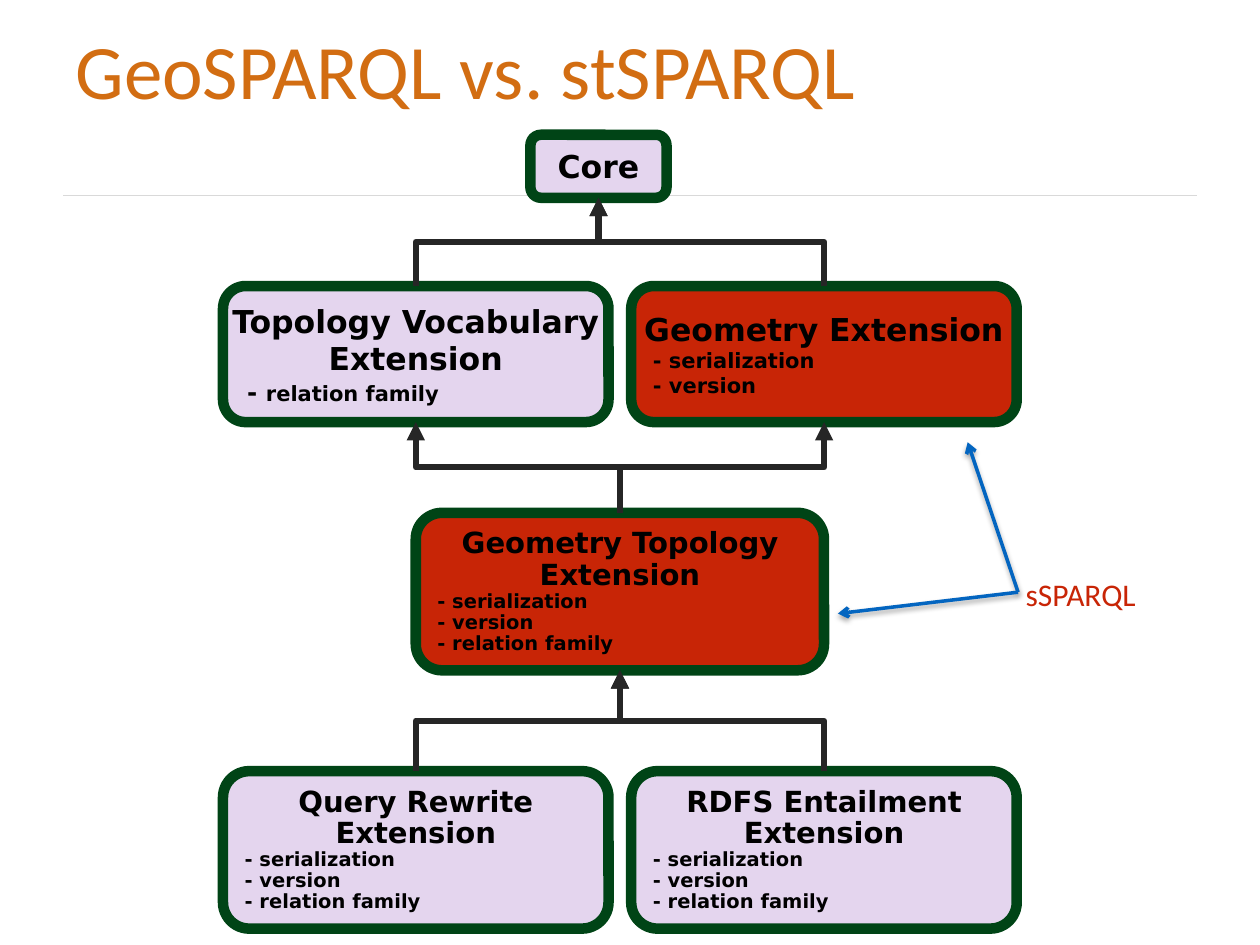
"""Builds the GeoSPARQL vs. stSPARQL slide, a hierarchy of extension boxes."""
from dataclasses import dataclass

from lxml import etree
from pptx import Presentation
from pptx.dml.color import RGBColor
from pptx.enum.shapes import MSO_CONNECTOR, MSO_SHAPE
from pptx.enum.text import MSO_ANCHOR, PP_ALIGN
from pptx.oxml.ns import qn
from pptx.util import Pt

PX = 9144
ROUNDED = MSO_SHAPE.ROUNDED_RECTANGLE
STRAIGHT, ELBOW = MSO_CONNECTOR.STRAIGHT, MSO_CONNECTOR.ELBOW
TOP, MIDDLE = MSO_ANCHOR.TOP, MSO_ANCHOR.MIDDLE
LEFT, CENTER = PP_ALIGN.LEFT, PP_ALIGN.CENTER


@dataclass(frozen=True)
class Theme:
    """Colours, fonts and type sizes of the slide."""
    title: str = "D26D12"
    rule: str = "D9D9D9"
    shared: str = "E4D5EE"
    covered: str = "C82506"
    border: str = "004416"
    tree: str = "262626"
    pointer: str = "0365C0"
    ink: str = "000000"
    text_font: str = "Calibri"
    box_font: str = "DejaVu Sans"
    title_size: float = 44
    label_size: float = 18
    heading_size: float = 18
    item_size: float = 12
    dash_size: float = 14
    small_heading_size: float = 16.6
    small_item_size: float = 11.1


def assign(target, values):
    """Set every attribute named in the dict of values."""
    for name, value in values.items():
        setattr(target, name, value)


class Diagram:
    """Draws the elements of one slide in one style."""

    def __init__(self, slide, theme):
        self.shapes = slide.shapes
        self.theme = theme

    def frame(self, shape, anchor, wrap, insets):
        left, top, right, bottom = (inset * PX for inset in insets)
        assign(shape.text_frame, {
            "vertical_anchor": anchor, "word_wrap": wrap,
            "margin_left": left, "margin_top": top,
            "margin_right": right, "margin_bottom": bottom})
        return shape.text_frame

    def run(self, paragraph, text, size, color, font, bold=False):
        run = paragraph.add_run()
        run.text = text
        assign(run.font, {"size": Pt(size), "name": font, "bold": bold})
        run.font.color.rgb = RGBColor.from_string(color)

    def text(self, bounds, words, size, color, anchor, insets):
        textbox = self.shapes.add_textbox(*(length * PX for length in bounds))
        frame = self.frame(textbox, anchor, True, insets)
        self.run(frame.paragraphs[0], words, size, color, self.theme.text_font)

    def box(self, bounds, fill, heading, items=(), small=False, dash_size=None):
        theme = self.theme
        heading_size = theme.small_heading_size if small else theme.heading_size
        item_size = theme.small_item_size if small else theme.item_size
        dash_size = dash_size or item_size
        spacing = 0.9 if small else 1.0

        box = self.shapes.add_shape(ROUNDED, *(length * PX for length in bounds))
        box.shadow.inherit = False
        box.fill.solid()
        box.fill.fore_color.rgb = RGBColor.from_string(fill)
        box.line.color.rgb = RGBColor.from_string(theme.border)
        box.line.width = Pt(6)
        frame = self.frame(box, MIDDLE, False, (0, 5, 0, 5))

        title = frame.paragraphs[0]
        assign(title, {"alignment": CENTER, "line_spacing": spacing})
        for index, line in enumerate(heading):
            if index:
                title.add_line_break()
            self.run(title, line, heading_size, theme.ink, theme.box_font, True)
        for item in items:
            paragraph = frame.add_paragraph()
            assign(paragraph, {"alignment": LEFT, "line_spacing": spacing})
            paragraph._p.get_or_add_pPr().set("marL", str(round(dash_size * PX)))
            self.run(paragraph, "- ", dash_size, theme.ink, theme.box_font, True)
            self.run(paragraph, item, item_size, theme.ink, theme.box_font, True)

    def line(self, start, end, color, width, kind=STRAIGHT, head=None, shadow=False):
        connector = self.shapes.add_connector(
            kind, *(round(length * PX) for length in (*start, *end)))
        connector.line.color.rgb = RGBColor.from_string(color)
        connector.line.width = Pt(width)
        if head:
            stroke = connector.line._get_or_add_ln()
            etree.SubElement(stroke, qn("a:tailEnd"), type=head)
        effects = etree.SubElement(connector._element.spPr, qn("a:effectLst"))
        if shadow:
            outer = etree.SubElement(
                effects, qn("a:outerShdw"), blurRad=str(Pt(3)), dist=str(Pt(1.8)),
                dir="5400000", rotWithShape="0")
            shade = etree.SubElement(outer, qn("a:srgbClr"), val=self.theme.ink)
            etree.SubElement(shade, qn("a:alpha"), val="35000")
        return connector

    def branch(self, child, parent):
        """Rise from child to parent by a quarter-turned elbow."""
        shift, rise = parent[0] - child[0], child[1] - parent[1]
        middle_x, middle_y = child[0] + shift / 2, child[1] - rise / 2
        turn, side = (90, -1) if shift > 0 else (270, 1)
        across, down = side * rise / 2, side * shift / 2
        elbow = self.line((middle_x - across, middle_y - down),
                          (middle_x + across, middle_y + down),
                          self.theme.tree, 3.5, ELBOW, "triangle")
        elbow._element.spPr.find(qn("a:xfrm")).set("rot", str(turn * 60000))

    def pointer(self, start, end):
        self.line(start, end, self.theme.pointer, 2, head="arrow", shadow=True)


def main():
    theme = Theme()
    deck = Presentation()
    assign(deck, {"slide_width": 1000 * PX, "slide_height": 750 * PX})
    diagram = Diagram(deck.slides.add_slide(deck.slide_layouts[6]), theme)

    diagram.line((50, 155), (950, 155), theme.rule, 0.75)
    diagram.text((55, 10, 895, 165), "GeoSPARQL vs. stSPARQL",
                 theme.title_size, theme.title, TOP, (5, 8, 5, 5))

    left, right, width = 177, 501, 306
    parameters = ("serialization", "version", "relation family")
    diagram.box((421, 107, 108, 50), theme.shared, ["Core"])
    diagram.box((left, 227, width, 108), theme.shared,
                ["Topology Vocabulary", "Extension"], parameters[2:],
                dash_size=theme.dash_size)
    diagram.box((right, 227, width, 108), theme.covered,
                ["Geometry Extension"], parameters[:2])
    for bounds, fill, heading in (
            ((330, 407, 324, 125), theme.covered, "Geometry Topology"),
            ((left, 612, width, 125), theme.shared, "Query Rewrite"),
            ((right, 612, width, 125), theme.shared, "RDFS Entailment")):
        diagram.box(bounds, fill, [heading, "Extension"], parameters, small=True)

    core_x, topology_x = 475, 492
    for column_x in (left + width // 2, right + width // 2):
        diagram.branch((column_x, 227), (core_x, 157))
        diagram.branch((topology_x, 407), (column_x, 335))
        diagram.branch((column_x, 612), (topology_x, 532))

    for target in ((768, 351), (665, 487)):
        diagram.pointer((808, 470), target)
    diagram.text((808, 450, 126, 42), "sSPARQL",
                 theme.label_size, theme.covered, MIDDLE, (6, 6, 6, 6))

    deck.save("out.pptx")


if __name__ == "__main__":
    main()
